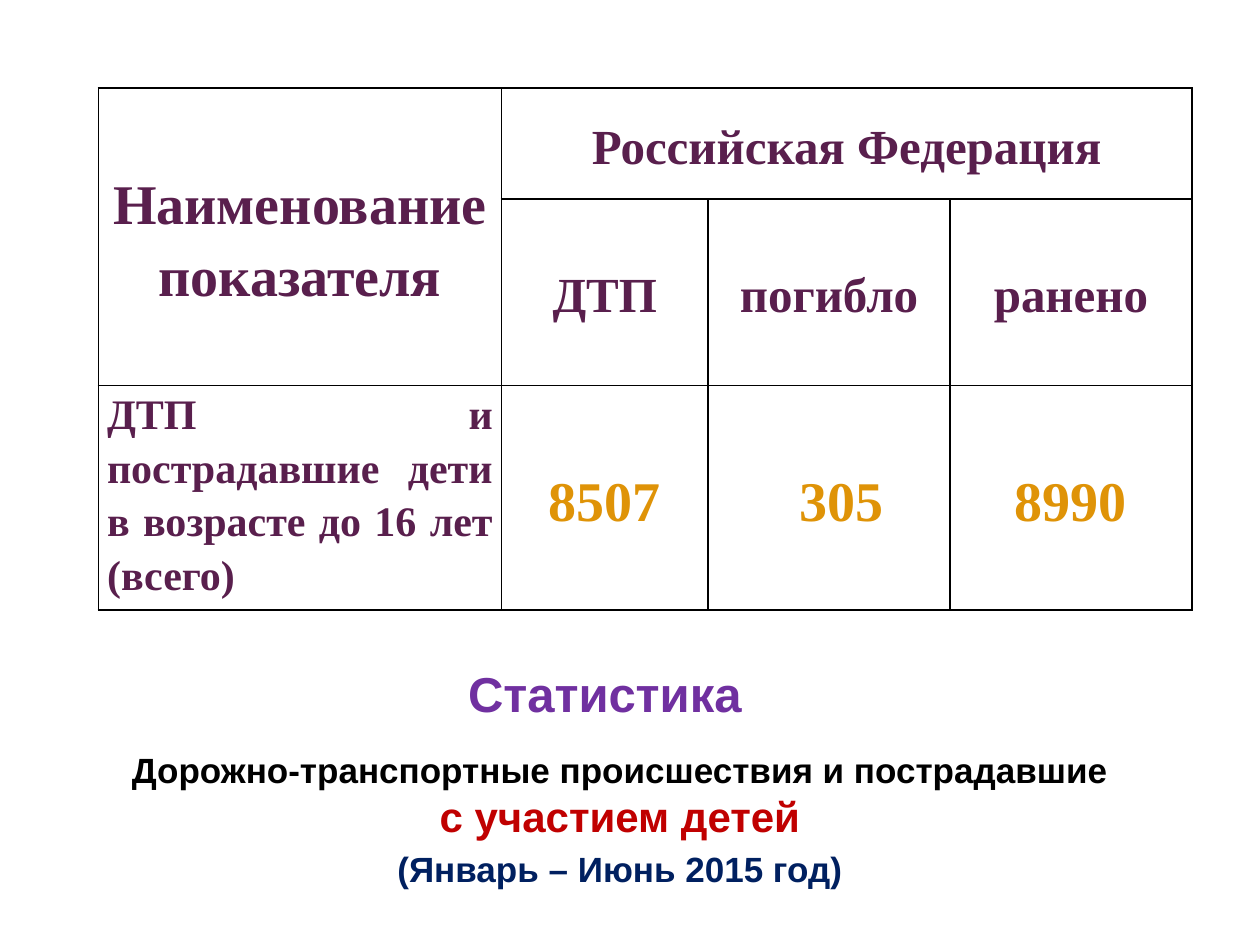
"""Build a slide with a road accident statistics table, a title and a caption."""
from lxml import etree
from pptx import Presentation
from pptx.dml.color import RGBColor
from pptx.enum.text import MSO_ANCHOR, PP_ALIGN
from pptx.oxml.ns import qn
from pptx.util import Inches, Pt

CENTER, JUSTIFY = PP_ALIGN.CENTER, PP_ALIGN.JUSTIFY
TOP, MIDDLE, BOTTOM = MSO_ANCHOR.TOP, MSO_ANCHOR.MIDDLE, MSO_ANCHOR.BOTTOM
SERIF, SANS = "Times New Roman", "Arial"
COLORS = {"plum": "591F4D", "gold": "DF9307", "violet": "7030A0", "red": "C00000",
          "navy": "002060", "black": "000000", "white": "FFFFFF"}

TITLE = ("Статистика", 28, "violet")
CAPTION = [
    [("Дорожно-транспортные происшествия и пострадавшие", 20, "black"),
     ("с участием детей", 24, "red")],
    [("(Январь – Июнь 2015 год)", 20, "navy")],
]
ROWS = [
    [("Наименование показателя", 32, "plum"), ("Российская Федерация", 28, "plum"), None, None],
    [None, ("ДТП", 28, "plum"), ("погибло", 28, "plum"), ("ранено", 28, "plum")],
    [("ДТП и пострадавшие дети в возрасте до 16 лет (всего)", 24, "plum"),
     ("8507", 32, "gold"), ("305", 32, "gold"), ("8990", 32, "gold")],
]
MERGES = [((0, 0), (1, 0)), ((0, 1), (0, 3))]
COL_WIDTHS = [3.2, 1.64, 1.92, 1.92]
ROW_HEIGHTS = [0.88, 1.48, 1.78]
ROW_HEIGHTS[1] = 1.48
LEFT, TABLE_TOP = 0.78, 0.7
PAD, INDENT = 0.07, 0.2
INDENTED = (2, 2)


def color(name):
    return RGBColor.from_string(COLORS[name])


def add_run(p, item, font):
    text, size, name = item
    r = p.add_run()
    r.text = text
    for key, value in {"name": font, "size": Pt(size), "bold": True}.items():
        setattr(r.font, key, value)
    r.font.color.rgb = color(name)


def add_borders(cell):
    tc_pr = cell._tc.get_or_add_tcPr()
    for i, side in enumerate(("lnL", "lnR", "lnT", "lnB")):
        ln = etree.Element(qn(f"a:{side}"), w=str(Pt(1)))
        fill = etree.SubElement(ln, qn("a:solidFill"))
        etree.SubElement(fill, qn("a:srgbClr"), val=COLORS["black"])
        tc_pr.insert(i, ln)


def format_cell(cell, item, pos):
    row, col = pos
    is_label = pos == (len(ROWS) - 1, 0)
    left = PAD + (INDENT if pos == INDENTED else 0)
    values = {"margin_left": Inches(left), "margin_right": Inches(PAD), "margin_top": 0,
              "margin_bottom": 0, "vertical_anchor": TOP if is_label else MIDDLE}
    for key, value in values.items():
        setattr(cell, key, value)
    cell.fill.solid()
    cell.fill.fore_color.rgb = color("white")
    add_borders(cell)
    if item:
        p = cell.text_frame.paragraphs[0]
        p.alignment = JUSTIFY if is_label else CENTER
        p.line_spacing = 1.15
        add_run(p, item, SERIF)


def add_stats_table(slide):
    size = [Inches(sum(lengths)) for lengths in (COL_WIDTHS, ROW_HEIGHTS)]
    table = slide.shapes.add_table(len(ROWS), len(COL_WIDTHS), Inches(LEFT),
                                   Inches(TABLE_TOP), *size).table
    for col, width in zip(table.columns, COL_WIDTHS):
        col.width = Inches(width)
    for row, height in zip(table.rows, ROW_HEIGHTS):
        row.height = Inches(height)
    for i, items in enumerate(ROWS):
        for j, item in enumerate(items):
            format_cell(table.cell(i, j), item, (i, j))
    for start, end in MERGES:
        table.cell(*start).merge(table.cell(*end))


def add_title(slide):
    sp = slide.shapes.title
    box = {"left": 1.8, "top": 5.16, "width": 6, "height": 0.62}
    for key, value in box.items():
        setattr(sp, key, Inches(value))
    tf = sp.text_frame
    tf.vertical_anchor = BOTTOM
    p = tf.paragraphs[0]
    p.alignment = CENTER
    add_run(p, TITLE, SANS)


def add_caption(slide):
    sp = slide.shapes.add_textbox(*map(Inches, (LEFT, 5.86, 8.28, 1.17)))
    tf = sp.text_frame
    tf.word_wrap = True
    tf.margin_top = Inches(0.08)
    for i, items in enumerate(CAPTION):
        p = tf.add_paragraph() if i else tf.paragraphs[0]
        p.alignment = CENTER
        p.space_before = Pt(4 if i else 0)
        for j, item in enumerate(items):
            if j:
                p.add_line_break()
            add_run(p, item, SANS)


def main():
    prs = Presentation()
    prs.slide_width, prs.slide_height = Inches(10), Inches(7.5)
    slide = prs.slides.add_slide(prs.slide_layouts[5])
    add_stats_table(slide)
    add_title(slide)
    add_caption(slide)
    prs.save("out.pptx")


if __name__ == "__main__":
    main()
